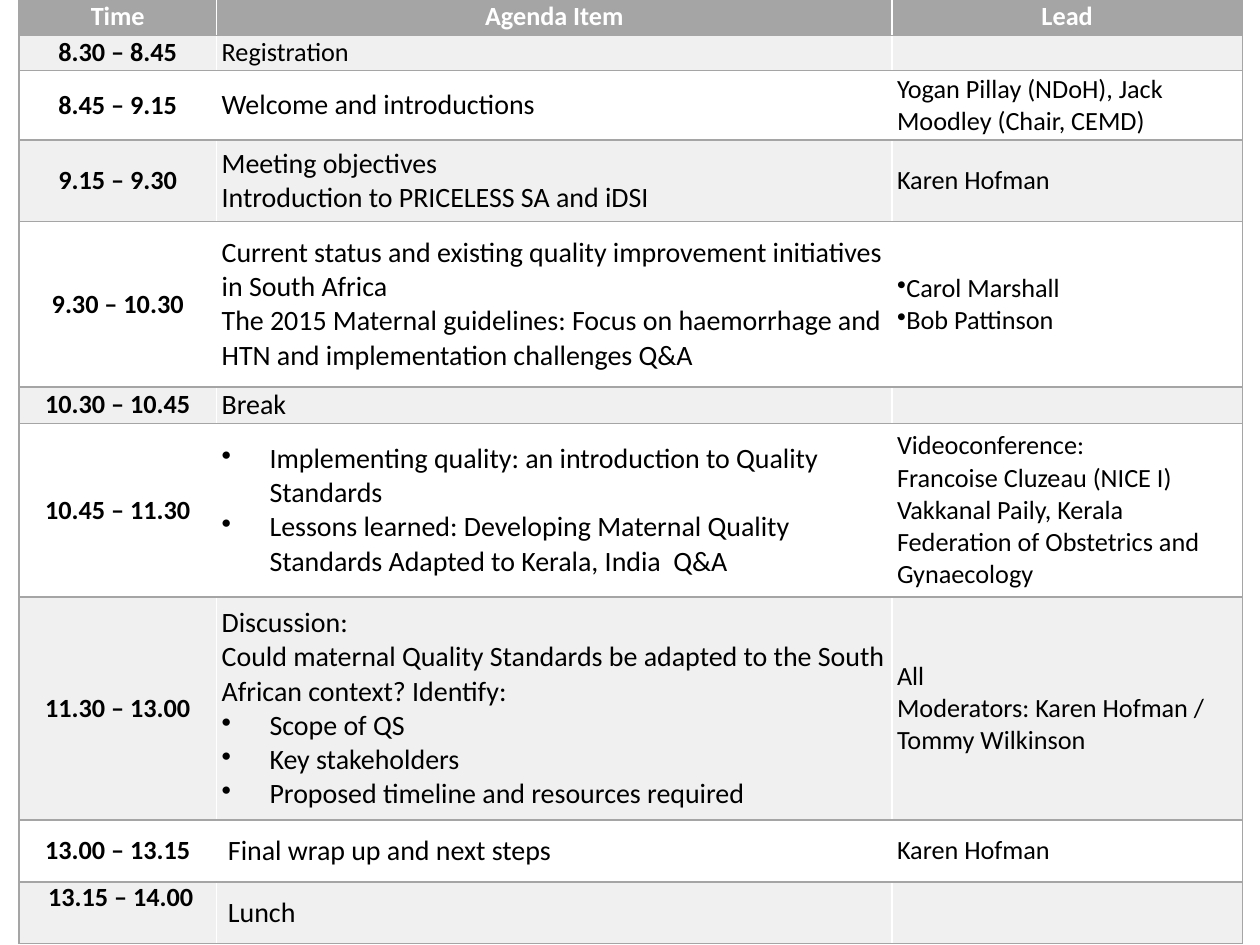
from lxml import etree
from pptx import Presentation
from pptx.dml.color import RGBColor
from pptx.enum.text import MSO_ANCHOR, PP_ALIGN
from pptx.oxml.ns import qn
from pptx.util import Inches, Pt

CENTER, LEFT = PP_ALIGN.CENTER, PP_ALIGN.LEFT
TOP, MIDDLE = MSO_ANCHOR.TOP, MSO_ANCHOR.MIDDLE
FONT = "Calibri"
BULLET = "•"
COLORS = {
    "grey": "A5A5A5",
    "band": "F0F0F0",
    "white": "FFFFFF",
    "black": "000000",
}
COLUMN_WIDTHS = [1.57, 5.36, 2.78]
COLUMN_EDGES = ["LTB", "TB", "RTB"]
HEADINGS = ["Time", "Agenda Item", "Lead"]
HEADER_HEIGHT = 0.28
AGENDA = [
    (0.28, "8.30 – 8.45", ["Registration"], []),
    (0.55, "8.45 – 9.15", ["Welcome and introductions"],
     ["Yogan Pillay (NDoH), Jack Moodley (Chair, CEMD)"]),
    (0.65, "9.15 – 9.30",
     ["Meeting objectives", "Introduction to PRICELESS SA and iDSI"],
     ["Karen Hofman"]),
    (1.31, "9.30 – 10.30",
     ["Current status and existing quality improvement initiatives in South Africa",
      "The 2015 Maternal guidelines: Focus on haemorrhage and HTN "
      "and implementation challenges Q&A"],
     ["•Carol Marshall", "•Bob Pattinson"]),
    (0.29, "10.30 – 10.45", ["Break"], []),
    (1.38, "10.45 – 11.30",
     ["•Implementing quality: an introduction to Quality Standards",
      "•Lessons learned: Developing Maternal Quality Standards "
      "Adapted to Kerala, India  Q&A"],
     ["Videoconference:", "Francoise Cluzeau (NICE I)",
      "Vakkanal Paily, Kerala Federation of Obstetrics and Gynaecology"]),
    (1.77, "11.30 – 13.00",
     ["Discussion:",
      "Could maternal Quality Standards be adapted to the South African context? "
      "Identify:",
      "•Scope of QS", "•Key stakeholders",
      "•Proposed timeline and resources required"],
     ["All", "Moderators: Karen Hofman / Tommy Wilkinson"]),
    (0.49, "13.00 – 13.15", [" Final wrap up and next steps"], ["Karen Hofman"]),
    (0.49, " 13.15 – 14.00", [" Lunch"], []),
]


def set_borders(cell, edges):
    """Draw a one-point grey line on each named edge of a cell."""
    properties = cell._tc.get_or_add_tcPr()
    for edge in edges:
        line = etree.SubElement(properties, qn(f"a:ln{edge}"), w=str(Pt(1)))
        fill = etree.SubElement(line, qn("a:solidFill"))
        etree.SubElement(fill, qn("a:srgbClr"), val=COLORS["grey"])


def set_bullet(para, indent):
    """Give a paragraph a bullet with a hanging indent."""
    properties = para._p.get_or_add_pPr()
    properties.set("marL", str(Inches(indent)))
    properties.set("indent", str(-Inches(indent)))
    etree.SubElement(properties, qn("a:buChar"), char=BULLET)


def style_cell(cell, fill, edges, anchor):
    """Set the margins, anchor, borders and fill of a cell."""
    cell.margin_left = cell.margin_right = Inches(0.04)
    cell.margin_top = cell.margin_bottom = 0
    cell.vertical_anchor = anchor
    set_borders(cell, edges)
    cell.fill.solid()
    cell.fill.fore_color.rgb = RGBColor.from_string(COLORS[fill])


def write_cell(cell, lines, size=15, color="black", bold=False, align=LEFT, indent=0):
    """Write one paragraph per line, with bullets where the line has one."""
    frame = cell.text_frame
    frame.text = "\n".join(line.removeprefix(BULLET) for line in lines)
    if not lines:
        etree.SubElement(frame.paragraphs[0]._p, qn("a:endParaRPr"), sz=str(size * 100))
    for line, para in zip(lines, frame.paragraphs):
        para.alignment = align
        if line.startswith(BULLET):
            set_bullet(para, indent)
        for span in para.runs:
            span.font.name = FONT
            span.font.size = Pt(size)
            span.font.bold = bold
            span.font.color.rgb = RGBColor.from_string(COLORS[color])


def add_agenda_table(page):
    """Add the empty agenda table with its column widths and row heights."""
    heights = [HEADER_HEIGHT] + [entry[0] for entry in AGENDA]
    frame = page.shapes.add_table(
        len(heights), len(COLUMN_WIDTHS),
        Inches(0.15), 0, Inches(sum(COLUMN_WIDTHS)), Inches(sum(heights)))
    table = frame.table
    for column, width in zip(table.columns, COLUMN_WIDTHS):
        column.width = Inches(width)
    for row, height in zip(table.rows, heights):
        row.height = Inches(height)
    return table


def fill_header(table):
    """Fill the heading row."""
    for cell, heading, edges in zip(table.rows[0].cells, HEADINGS, COLUMN_EDGES):
        style_cell(cell, "grey", edges, TOP)
        write_cell(cell, [heading], color="white", bold=True, align=CENTER)


def fill_agenda(table):
    """Fill the banded agenda rows."""
    last = len(AGENDA)
    for number, (_, time, items, leads) in enumerate(AGENDA, start=1):
        cells = list(table.rows[number].cells)
        for column, cell in enumerate(cells):
            anchor = TOP if number == last and column == 0 else MIDDLE
            style_cell(cell, "band" if number % 2 else "white",
                       COLUMN_EDGES[column], anchor)
        write_cell(cells[0], [time], bold=True, align=CENTER)
        write_cell(cells[1], items, size=15 if number == 1 else 16, indent=0.38)
        write_cell(cells[2], leads)


def main():
    """Build the agenda slide and save it."""
    deck = Presentation()
    deck.slide_width, deck.slide_height = Inches(10), Inches(7.5)
    page = deck.slides.add_slide(deck.slide_layouts[6])
    table = add_agenda_table(page)
    fill_header(table)
    fill_agenda(table)
    deck.save("out.pptx")


if __name__ == "__main__":
    main()
